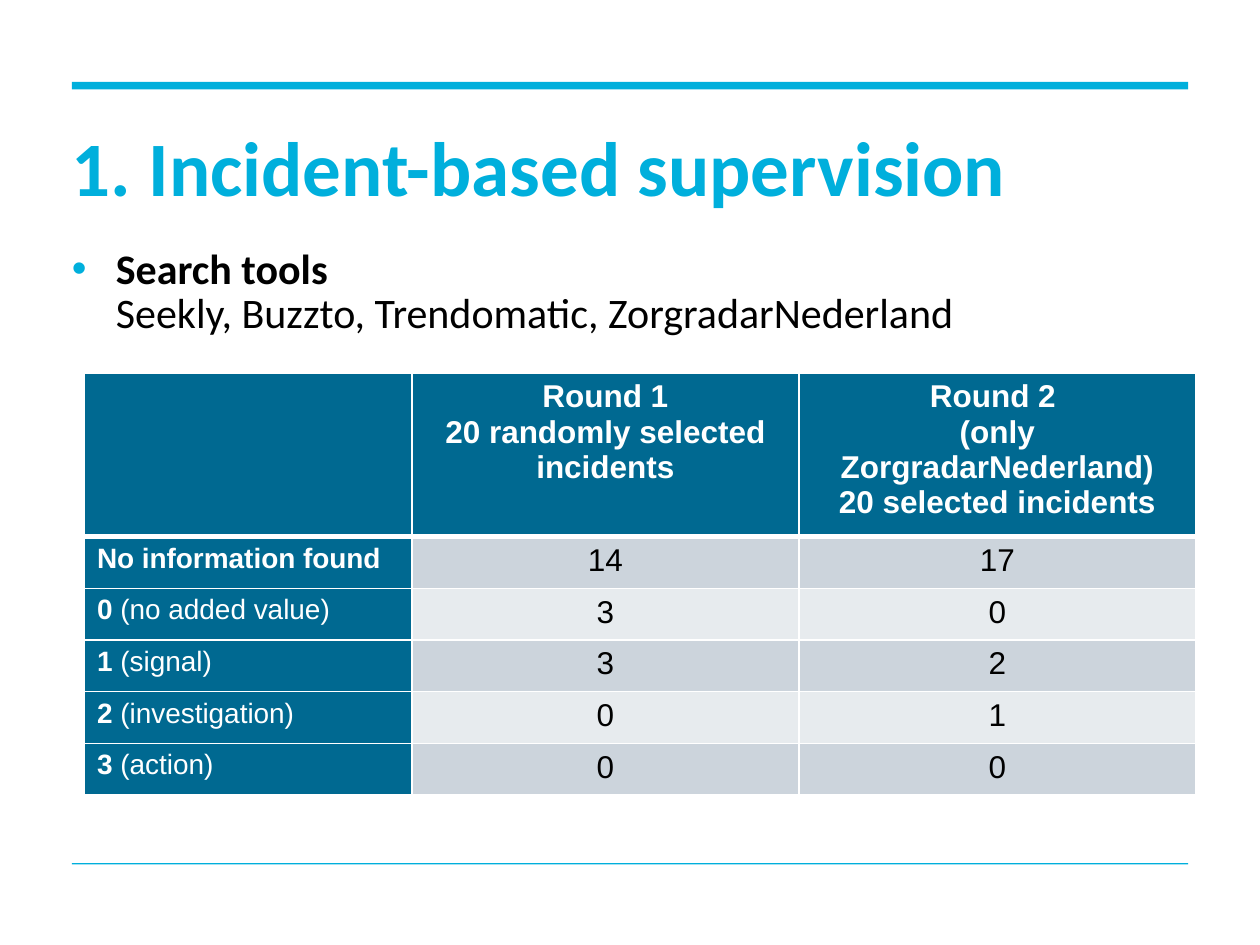
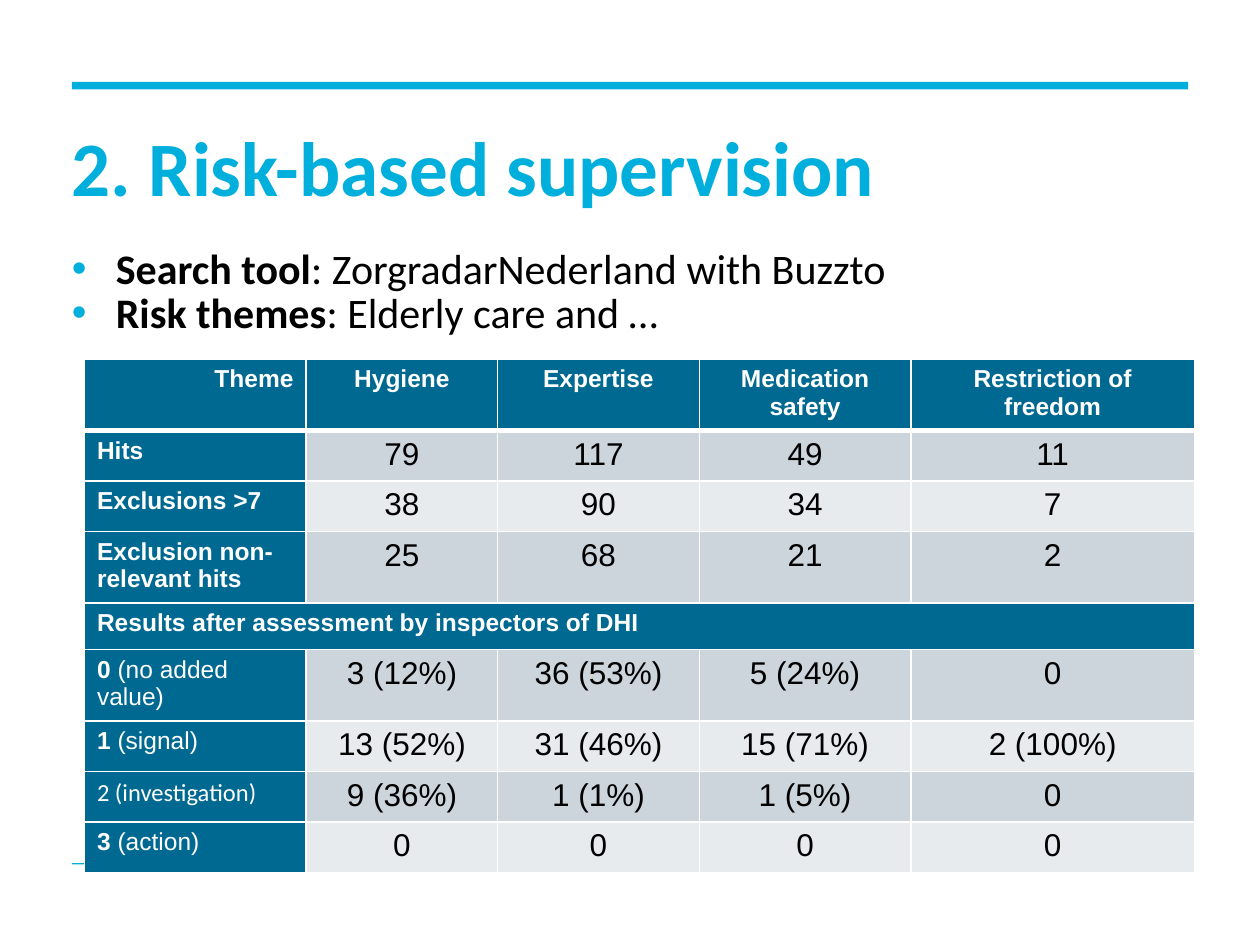
from dataclasses import dataclass
from pptx import Presentation
from pptx.dml.color import RGBColor
from pptx.enum.shapes import MSO_SHAPE as Shape
from pptx.enum.text import MSO_ANCHOR as Anchor, PP_ALIGN as Align
from pptx.oxml import parse_xml
from pptx.oxml.ns import nsdecls
from pptx.util import Inches, Pt

# Content: the part of a text before "|" is bold, the part after it regular
SLIDES = [
    {
        "title": "1. Incident-based supervision",
        "body": [("•", "Search tools|"),
                 ("", "|Seekly, Buzzto, Trendomatic, ZorgradarNederland")],
        "top": 2.96,
        "cols": [2.6, 3.07, 3.15],
        "row_heights": [0.41] * 6,
        "head_size": 18,
        "label_size": 16,
        "rows": [
            ["", "Round 1|\n20 randomly selected incidents|",
             "Round 2 |\n(only ZorgradarNederland)|\n20 selected incidents|"],
            ["No information found|", "|14", "|17"],
            ["0 |(no added value)", "|3", "|0"],
            ["1 |(signal)", "|3", "|2"],
            ["2 |(investigation)", "|0", "|1"],
            ["3 |(action)", "|0", "|0"],
        ],
    },
    {
        "title": "2. Risk-based supervision",
        "body": [("•", "Search tool|: ZorgradarNederland with Buzzto"),
                 ("•", "Risk themes|: Elderly care and …")],
        "top": 2.85,
        "cols": [1.76, 1.52, 1.6, 1.68, 2.25],
        "row_heights": [0.39, 0.37, 0.38, 0.53] + [0.37] * 5,
        "head_size": 14,
        "label_size": 14,
        "rows": [
            ["Theme|", "Hygiene|", "Expertise|", "Medication safety|",
             "Restriction of freedom|"],
            ["Hits|", "|79", "|117", "|49", "|11"],
            ["Exclusions >7|", "|38", "|90", "|34", "|7"],
            ["Exclusion non-relevant hits|", "|25", "|68", "|21", "|2"],
            ["Results after assessment by inspectors of DHI|"],
            ["0 |(no added value)", "|3 (12%)", "|36 (53%)", "|5 (24%)", "|0"],
            ["1 |(signal)", "|13 (52%)", "|31 (46%)", "|15 (71%)", "|2 (100%)"],
            ["|2 (investigation)", "|9 (36%)", "|1 (1%)", "|1 (5%)", "|0"],
            ["3 |(action)", "|0", "|0", "|0", "|0"],
        ],
    },
]


@dataclass(frozen=True)
class Theme:
    accent: str = "00AFDC"
    label_fill: str = "006991"
    bands: tuple = ("CCD4DC", "E7EBEE")
    light: str = "FFFFFF"
    dark: str = "000000"
    text_font: str = "Calibri"
    table_font: str = "Arial"
    title_size: int = 44
    body_size: int = 24
    value_size: int = 18
    title_leading: int = 42
    body_leading: int = 25


T = Theme()
WIDTH, HEIGHT = 10, 7.5
MARGIN = 0.57
CONTENT_W = WIDTH - 2 * MARGIN
TABLE_LEFT = 0.67
INDENT = 0.35
RULES = [(0.65, 0.06), (6.85, 0.01)]  # top and height


def rgb(color):
    return RGBColor.from_string(color)


def write(p, text, *, size, color, font, align=None, leading=None, bullet=None):
    """Fill one paragraph with a bold part and a regular part."""
    if bullet is not None:
        pPr = p._p.get_or_add_pPr()
        pPr.set("marL", str(Inches(INDENT)))
        pPr.set("indent", str(-Inches(INDENT) if bullet else 0))
        if bullet:
            for xml in (f'<a:buClr {nsdecls("a")}><a:srgbClr val="{T.accent}"/></a:buClr>',
                        f'<a:buFont {nsdecls("a")} typeface="Arial"/>',
                        f'<a:buChar {nsdecls("a")} char="{bullet}"/>'):
                pPr.append(parse_xml(xml))
    if align is not None:
        p.alignment = align
    if leading:
        p.line_spacing = Pt(leading)
    bold, _, regular = text.partition("|")
    for part, is_bold in ((bold, True), (regular, False)):
        if part:
            r = p.add_run()
            r.text = part
            r.font.size, r.font.name, r.font.bold = Pt(size), font, is_bold
            r.font.color.rgb = rgb(color)


def paragraphs(tf, count):
    return [tf.paragraphs[0]] + [tf.add_paragraph() for _ in range(count - 1)]


def add_text(s, top, height, lines, anchor=Anchor.TOP, **fmt):
    """Add a full-width text box; lines holds (bullet, text) pairs."""
    sp = s.shapes.add_textbox(Inches(MARGIN), Inches(top), Inches(CONTENT_W), Inches(height))
    tf = sp.text_frame
    tf.word_wrap = True
    tf.vertical_anchor = anchor
    tf.margin_left = tf.margin_right = tf.margin_top = tf.margin_bottom = 0
    for p, (bullet, text) in zip(paragraphs(tf, len(lines)), lines):
        write(p, text, bullet=bullet, font=T.text_font, **fmt)


def add_rules(s):
    for top, height in RULES:
        sp = s.shapes.add_shape(Shape.RECTANGLE, Inches(MARGIN), Inches(top),
                                Inches(CONTENT_W), Inches(height))
        sp.shadow.inherit = False
        sp.fill.solid()
        sp.fill.fore_color.rgb = rgb(T.accent)
        sp.line.fill.background()


def style_cell(cell, fill, top=1, bottom=1):
    cell.fill.solid()
    cell.fill.fore_color.rgb = rgb(fill)
    tcPr = cell._tc.get_or_add_tcPr()
    borders = (("lnL", 1), ("lnR", 1), ("lnT", top), ("lnB", bottom))
    for i, (side, width) in enumerate(borders):
        tcPr.insert(i, parse_xml(
            f'<a:{side} {nsdecls("a")} w="{Pt(width)}"><a:solidFill>'
            f'<a:srgbClr val="{T.light}"/></a:solidFill></a:{side}>'))


def cell_format(data, row, col, text):
    """Choose the type for a heading, a row label or a value."""
    if row == 0:
        return dict(size=data["head_size"], color=T.light, font=T.table_font,
                    align=Align.CENTER if col else Align.RIGHT)
    if col == 0:
        font = T.text_font if text.startswith("|") else T.table_font
        return dict(size=data["label_size"], color=T.light, font=font)
    return dict(size=T.value_size, color=T.dark, font=T.table_font, align=Align.CENTER)


def add_results(s, data):
    rows, cols, heights = data["rows"], data["cols"], data["row_heights"]
    frame = s.shapes.add_table(len(rows), len(cols), Inches(TABLE_LEFT), Inches(data["top"]),
                               Inches(sum(cols)), Inches(sum(heights)))
    table = frame.table
    for column, width in zip(table.columns, cols):
        column.width = Inches(width)
    for r, (texts, height) in enumerate(zip(rows, heights)):
        table.rows[r].height = Inches(height)
        spans = len(texts) == 1
        for c in range(len(cols)):
            is_label = r == 0 or c == 0 or spans
            style_cell(table.cell(r, c),
                       T.label_fill if is_label else T.bands[(r - 1) % 2],
                       top=3 if r == 1 else 1, bottom=3 if r == 0 else 1)
        if spans:
            table.cell(r, 0).merge(table.cell(r, len(cols) - 1))
        for c, text in enumerate(texts):
            lines = text.split("\n")
            for p, line in zip(paragraphs(table.cell(r, c).text_frame, len(lines)), lines):
                write(p, line, **cell_format(data, r, c, text))


def main():
    prs = Presentation()
    prs.slide_width, prs.slide_height = Inches(WIDTH), Inches(HEIGHT)
    for data in SLIDES:
        s = prs.slides.add_slide(prs.slide_layouts[6])
        add_rules(s)
        add_text(s, 1.1, 0.58, [(None, data["title"] + "|")], anchor=Anchor.MIDDLE,
                 size=T.title_size, color=T.accent, leading=T.title_leading)
        add_text(s, 1.98, 4.51, data["body"],
                 size=T.body_size, color=T.dark, leading=T.body_leading)
        add_results(s, data)
    prs.save("out.pptx")


if __name__ == "__main__":
    main()
